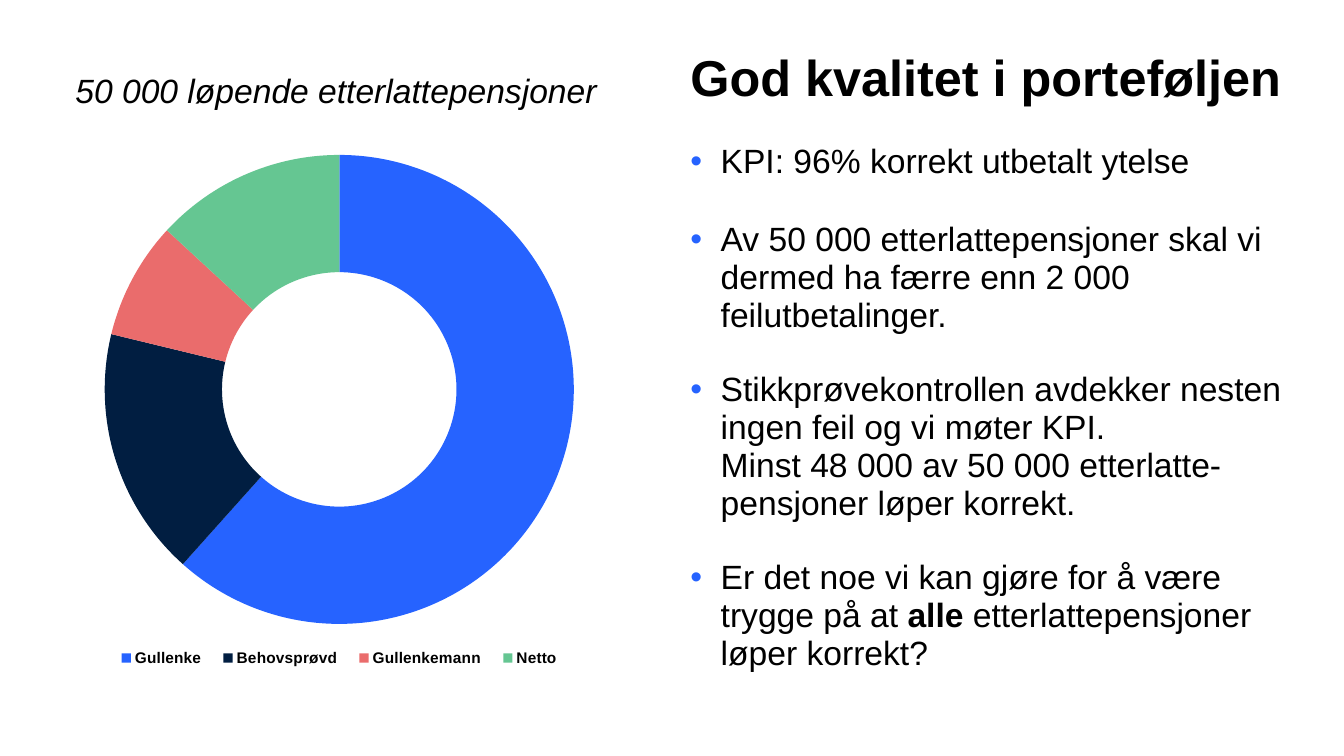
"""Build the slide on the quality of the survivor pension portfolio."""
from dataclasses import dataclass

import lxml.etree
import pptx
import pptx.chart.data
import pptx.dml.color
import pptx.enum.chart
import pptx.enum.text
import pptx.oxml
import pptx.oxml.ns
import pptx.util

Inches = pptx.util.Inches
Pt = pptx.util.Pt
RGBColor = pptx.dml.color.RGBColor

FONT = "Arial"
BLACK = RGBColor(0x00, 0x00, 0x00)
BLUE = RGBColor(0x26, 0x63, 0xFF)
NAVY = RGBColor(0x01, 0x1E, 0x41)
CORAL = RGBColor(0xEA, 0x6C, 0x6C)
GREEN = RGBColor(0x65, 0xC6, 0x92)


@dataclass(frozen=True)
class Slice:
    name: str
    share: int
    color: RGBColor


@dataclass(frozen=True)
class Bullet:
    text: str
    bold: str = ""
    ending: str = ""
    space_before: float = 26


SLICES = [
    Slice("Gullenke", 61, BLUE),
    Slice("Behovsprøvd", 17, NAVY),
    Slice("Gullenkemann", 8, CORAL),
    Slice("Netto", 13, GREEN),
]

BULLETS = [
    Bullet("KPI: 96% korrekt utbetalt ytelse", space_before=0),
    Bullet("Av 50 000 etterlattepensjoner skal vi dermed ha færre enn 2 000 feilutbetalinger.",
           space_before=29),
    Bullet("Stikkprøvekontrollen avdekker nesten ingen feil og vi møter KPI.\n"
           "Minst 48 000 av 50 000 etterlatte-pensjoner løper korrekt."),
    Bullet("Er det noe vi kan gjøre for å være trygge på at ", "alle ",
           "etterlattepensjoner løper korrekt?"),
]


def add_text(para, text: str, *, size: float = 24, bold: bool = False,
             italic: bool = False) -> None:
    for index, line in enumerate(text.split("\n")):
        if index:
            para.add_line_break()
        span = para.add_run()
        span.text = line
        span.font.name = FONT
        span.font.size = Pt(size)
        span.font.bold = bold
        span.font.italic = italic
        span.font.color.rgb = BLACK


def add_box(slide, left: float, top: float, width: float, height: float, wrap: bool = True):
    box = slide.shapes.add_textbox(Inches(left), Inches(top), Inches(width), Inches(height))
    box.text_frame.word_wrap = wrap
    box.text_frame.vertical_anchor = pptx.enum.text.MSO_ANCHOR.TOP
    return box.text_frame


def set_bullet(para, color: RGBColor) -> None:
    properties = para._p.get_or_add_pPr()
    properties.set("marL", str(Inches(0.3)))
    properties.set("indent", str(Inches(-0.3)))
    qn = pptx.oxml.ns.qn
    bullet_color = lxml.etree.SubElement(properties, qn("a:buClr"))
    lxml.etree.SubElement(bullet_color, qn("a:srgbClr"), val=str(color))
    lxml.etree.SubElement(properties, qn("a:buFont"), typeface=FONT)
    lxml.etree.SubElement(properties, qn("a:buChar"), char="•")


def add_bullets(slide, bullets: list[Bullet]) -> None:
    frame = add_box(slide, 6.75, 1.37, 6.13, 5.21)
    for index, bullet in enumerate(bullets):
        para = frame.add_paragraph() if index else frame.paragraphs[0]
        set_bullet(para, BLUE)
        para.line_spacing = 0.94
        para.space_before = Pt(bullet.space_before)
        add_text(para, bullet.text)
        if bullet.bold:
            add_text(para, bullet.bold, bold=True)
            add_text(para, bullet.ending)


def place(element, left: float, top: float, width: float, height: float, inner: bool) -> None:
    qn = pptx.oxml.ns.qn
    for old in element.findall(qn("c:layout")):
        element.remove(old)
    layout = lxml.etree.Element(qn("c:layout"))
    manual = lxml.etree.SubElement(layout, qn("c:manualLayout"))
    settings = {"xMode": "edge", "yMode": "edge", "x": left, "y": top, "w": width, "h": height}
    if inner:
        settings = {"layoutTarget": "inner", **settings}
    for name, value in settings.items():
        lxml.etree.SubElement(manual, qn(f"c:{name}"), val=str(value))
    position = element.find(qn("c:legendPos"))
    if position is None:
        element.insert(0, layout)
    else:
        position.addnext(layout)


def add_doughnut(slide, slices: list[Slice]) -> None:
    data = pptx.chart.data.CategoryChartData()
    data.categories = [part.name for part in slices]
    data.add_series("Series 1", [part.share for part in slices])
    chart = slide.shapes.add_chart(
        pptx.enum.chart.XL_CHART_TYPE.DOUGHNUT,
        Inches(0.89), Inches(0.41), Inches(4.95), Inches(6.58), data).chart
    chart.has_title = False
    chart.font.name = FONT
    chart.font.size = Pt(10)
    chart.font.color.rgb = BLACK
    plot = chart.plots[0]
    plot.vary_by_categories = True
    for index, part in enumerate(slices):
        fill = plot.series[0].points[index].format.fill
        fill.solid()
        fill.fore_color.rgb = part.color
    chart.has_legend = True
    legend = chart.legend
    legend.position = pptx.enum.chart.XL_LEGEND_POSITION.TOP
    legend.include_in_layout = False
    legend.font.name = FONT
    legend.font.size = Pt(11)
    legend.font.bold = True
    legend.font.color.rgb = BLACK
    place(legend._element, 0.03, 0.91, 0.94, 0.04, inner=False)
    place(chart._chartSpace.chart.plotArea, 0.03, 0.17, 0.94, 0.71, inner=True)


def main() -> None:
    deck = pptx.Presentation()
    deck.slide_width = Inches(13.33)
    deck.slide_height = Inches(7.5)
    slide = deck.slides.add_slide(deck.slide_layouts[6])
    title = add_box(slide, 6.75, 0.41, 6.13, 1.29)
    add_text(title.paragraphs[0], "God kvalitet i porteføljen", size=36, bold=True)
    add_bullets(slide, BULLETS)
    add_doughnut(slide, SLICES)
    caption = add_box(slide, 0.65, 0.64, 5.43, 0.5, wrap=False)
    add_text(caption.paragraphs[0], "50 000 løpende etterlattepensjoner", italic=True)
    deck.save("out.pptx")


if __name__ == "__main__":
    main()
